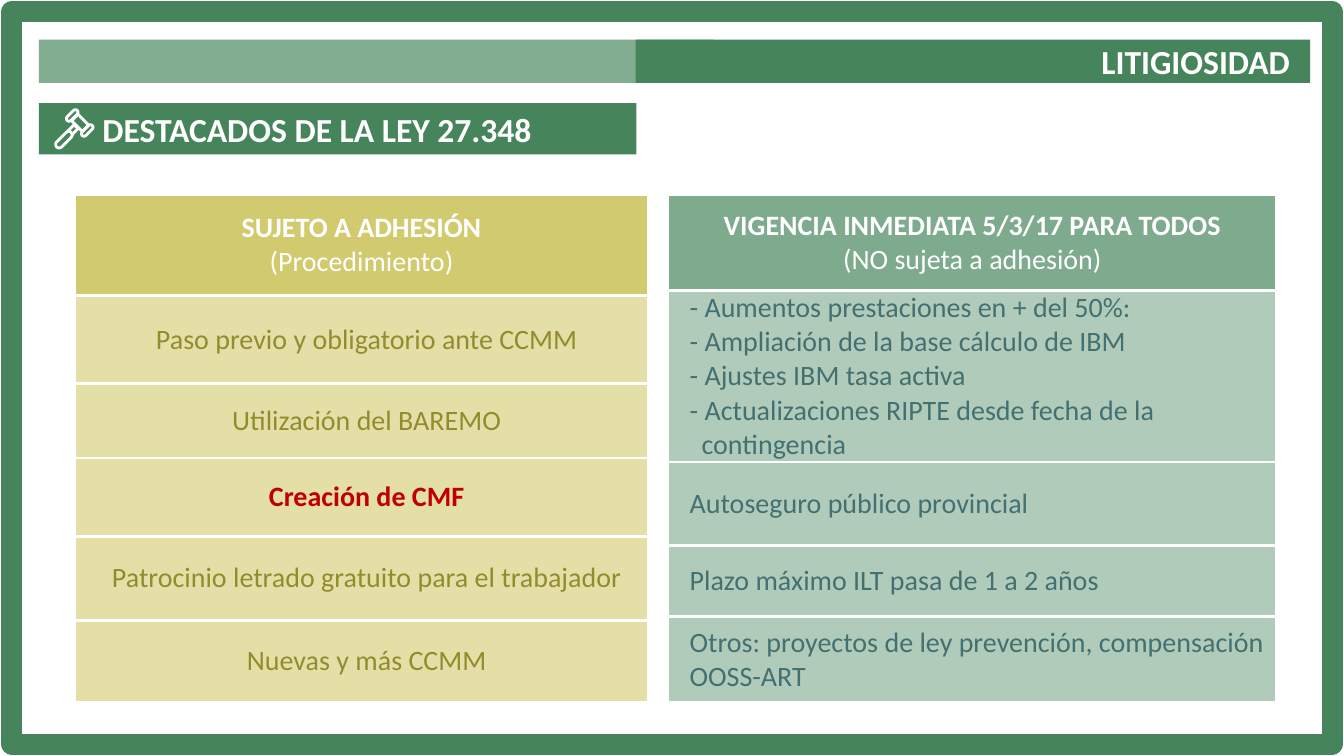
from lxml import etree
from pptx import Presentation
from pptx.dml.color import RGBColor
from pptx.enum.shapes import MSO_SHAPE
from pptx.enum.text import MSO_ANCHOR, PP_ALIGN
from pptx.oxml.ns import qn
from pptx.util import Cm, Pt

RECT, ROUNDED = MSO_SHAPE.RECTANGLE, MSO_SHAPE.ROUNDED_RECTANGLE
LEFT, CENTER, RIGHT = PP_ALIGN.LEFT, PP_ALIGN.CENTER, PP_ALIGN.RIGHT
MIDDLE = MSO_ANCHOR.MIDDLE

WHITE = RGBColor(0xFF, 0xFF, 0xFF)
GREEN = RGBColor(0x46, 0x85, 0x5C)
SAGE = RGBColor(0x7E, 0xAA, 0x8D)
PALE_SAGE = RGBColor(0xB1, 0xCB, 0xBA)
TEAL = RGBColor(0x43, 0x70, 0x71)
OLIVE = RGBColor(0xD2, 0xCA, 0x6F)
PALE_OLIVE = RGBColor(0xE3, 0xDF, 0xA7)
DARK_OLIVE = RGBColor(0x93, 0x8C, 0x2D)
RED = RGBColor(0xC0, 0x00, 0x00)

FONT = "Calibri"
NO_STYLE = "{2D5ABB26-0587-4C30-8999-92F81FD0307C}"
PADDING = 0.25
TEXT_INDENT = 0.51
HANGING = 0.3

# Row heights in cm, row text
ADHESION_HEAD = ["SUJETO A ADHESIÓN", "(Procedimiento)"]
ADHESION_HEIGHTS = [2.54, 2.21, 1.88, 1.98, 2.11, 2.06]
ADHESION_ROWS = [
    ["Paso previo y obligatorio ante CCMM"],
    ["Utilización del BAREMO"],
    ["Creación de CMF"],
    ["Patrocinio letrado gratuito para el trabajador"],
    ["Nuevas y más CCMM"],
]
HIGHLIGHT = "Creación de CMF"

VIGENCIA_HEAD = ["VIGENCIA INMEDIATA 5/3/17 PARA TODOS", "(NO sujeta a adhesión)"]
VIGENCIA_HEIGHTS = [2.41, 4.01, 2.11, 1.78, 2.18]
VIGENCIA_ROWS = [
    ["- Aumentos prestaciones en + del 50%:",
     "- Ampliación de la base cálculo de IBM",
     "- Ajustes IBM tasa activa",
     "- Actualizaciones RIPTE desde fecha de la contingencia"],
    ["Autoseguro público provincial"],
    ["Plazo máximo ILT pasa de 1 a 2 años"],
    ["Otros: proyectos de ley prevención, compensación OOSS-ART"],
]


def add_text(paragraph, text, size, color, bold=False, align=LEFT):
    paragraph.alignment = align
    run = paragraph.add_run()
    run.text = text
    run.font.name = FONT
    run.font.size = Pt(size)
    run.font.bold = bold
    run.font.color.rgb = color


def add_block(slide, kind, left, top, width, height, fill=None, line=None, weight=1):
    block = slide.shapes.add_shape(kind, Cm(left), Cm(top), Cm(width), Cm(height))
    block.shadow.inherit = False
    if fill is None:
        block.fill.background()
    else:
        block.fill.solid()
        block.fill.fore_color.rgb = fill
    if line is None:
        block.line.fill.background()
    else:
        block.line.color.rgb = line
        block.line.width = Pt(weight)
    return block


def add_bar_text(bar, text, align, left=0, right=0, before=0):
    frame = bar.text_frame
    frame.word_wrap = True
    frame.vertical_anchor = MIDDLE
    frame.margin_left, frame.margin_right = Cm(left), Cm(right)
    frame.margin_top = frame.margin_bottom = 0
    frame.paragraphs[0].space_before = Pt(before)
    add_text(frame.paragraphs[0], text, 24, WHITE, True, align)


def add_section_band(slide, left, top, width, height):
    half = 17
    light = add_block(slide, RECT, left, top, half, height, GREEN)
    tint = light.fill._xPr.find(qn("a:solidFill"))[0]
    etree.SubElement(tint, qn("a:alpha"), val="67000")
    dark = add_block(slide, RECT, left + width - half, top, half, height, GREEN)
    add_bar_text(dark, "LITIGIOSIDAD", RIGHT, right=TEXT_INDENT, before=1)


def add_gavel(slide, left, top):
    # Centre x, centre y, length, thickness, tilt, outline kind
    parts = [
        (0.47, 0.55, 0.25, 0.14, -45, RECT),        # neck
        (0.66, 0.37, 0.38, 0.23, 45, RECT),         # head
        (0.46, 0.18, 0.36, 0.13, -45, ROUNDED),     # upper cap
        (0.84, 0.56, 0.36, 0.13, -45, ROUNDED),     # lower cap
        (0.25, 0.79, 0.52, 0.18, -45, ROUNDED),     # handle
    ]
    for x, y, length, thickness, tilt, kind in parts:
        part = add_block(slide, kind, left + x - length / 2, top + y - thickness / 2,
                         length, thickness, GREEN, WHITE, 2)
        part.rotation = tilt
        if kind == ROUNDED:
            part.adjustments[0] = 0.5


def add_title_bar(slide, left, top, width, height):
    bar = add_block(slide, RECT, left, top, width, height, GREEN)
    add_bar_text(bar, "DESTACADOS DE LA LEY 27.348", LEFT, left=1.6)
    add_gavel(slide, left + 0.38, top + 0.13)


def add_rules(cell):
    for position, side in enumerate(("a:lnT", "a:lnB")):
        rule = etree.Element(qn(side), w=str(Pt(2.25)))
        paint = etree.SubElement(rule, qn("a:solidFill"))
        etree.SubElement(paint, qn("a:srgbClr"), val=str(WHITE))
        cell._tc.get_or_add_tcPr().insert(position, rule)


def prepare_cell(cell, fill, left, padding):
    cell.fill.solid()
    cell.fill.fore_color.rgb = fill
    cell.vertical_anchor = MIDDLE
    cell.margin_left, cell.margin_right = Cm(left), Cm(padding)
    cell.margin_top = cell.margin_bottom = Cm(padding)
    add_rules(cell)


def write_lines(cell, lines, color, align, bold_line=None):
    for number, text in enumerate(lines):
        frame = cell.text_frame
        paragraph = frame.paragraphs[0] if number == 0 else frame.add_paragraph()
        tone = RED if text == HIGHLIGHT else color
        add_text(paragraph, text, 20, tone, text in (bold_line, HIGHLIGHT), align)
        if text.startswith("- "):
            properties = paragraph._p.get_or_add_pPr()
            properties.set("marL", str(Cm(HANGING)))
            properties.set("indent", str(-Cm(HANGING)))


def add_column(slide, left, top, width, heights, head, rows, colors, align, padding):
    head_fill, row_fill, row_text = colors
    table = slide.shapes.add_table(len(heights), 1, Cm(left), Cm(top),
                                   Cm(width), Cm(sum(heights))).table
    table._tbl.tblPr.find(qn("a:tableStyleId")).text = NO_STYLE
    for row, height in zip(table.rows, heights):
        row.height = Cm(height)
    prepare_cell(table.cell(0, 0), head_fill, PADDING, PADDING)
    write_lines(table.cell(0, 0), head, WHITE, CENTER, bold_line=head[0])
    for number, lines in enumerate(rows, start=1):
        cell = table.cell(number, 0)
        prepare_cell(cell, row_fill, TEXT_INDENT, padding)
        write_lines(cell, lines, row_text, align)


def main():
    deck = Presentation()
    deck.slide_width, deck.slide_height = Cm(33.87), Cm(19.05)
    slide = deck.slides.add_slide(deck.slide_layouts[6])

    # Heading bars and frame
    add_section_band(slide, 0.98, 1, 32.04, 1.09)
    add_title_bar(slide, 0.98, 2.6, 15.06, 1.29)
    add_block(slide, RECT, 0.3, 0.3, 33.27, 18.45, line=GREEN, weight=15)

    # Two columns of the law
    add_column(slide, 1.91, 4.91, 14.4, ADHESION_HEIGHTS, ADHESION_HEAD, ADHESION_ROWS,
               (OLIVE, PALE_OLIVE, DARK_OLIVE), CENTER, PADDING)
    add_column(slide, 16.87, 4.91, 15.27, VIGENCIA_HEIGHTS, VIGENCIA_HEAD, VIGENCIA_ROWS,
               (SAGE, PALE_SAGE, TEAL), LEFT, 0)

    deck.save("out.pptx")


if __name__ == "__main__":
    main()
